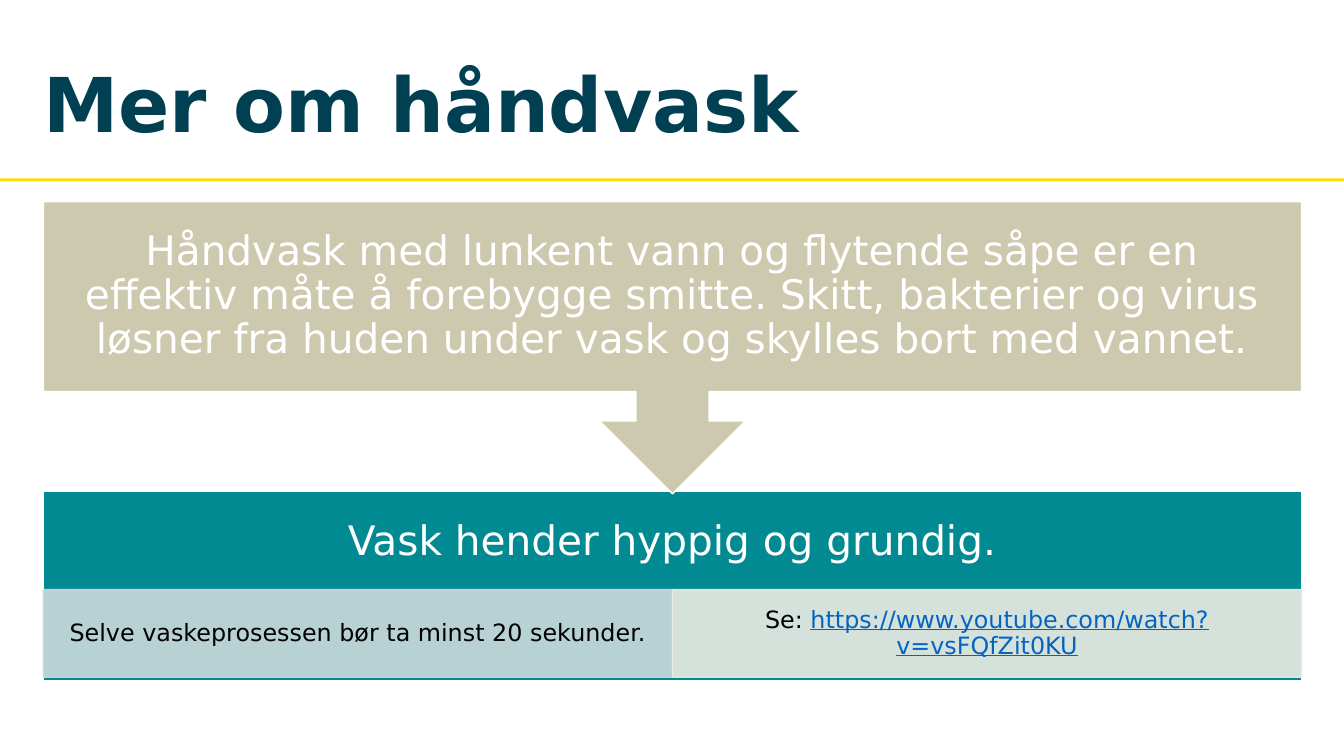
from pptx import Presentation
from pptx.dml.color import RGBColor
from pptx.enum.shapes import MSO_SHAPE as Shape
from pptx.enum.text import MSO_ANCHOR as Anchor, MSO_AUTO_SIZE as AutoSize, PP_ALIGN as Align
from pptx.oxml.ns import qn
from pptx.util import Inches, Pt
from lxml import etree

COLORS = {
    "navy": "004052", "yellow": "FFDD00", "teal": "018A92", "sand": "CDC9AF",
    "mist": "CCDADC", "cream": "EDECE4", "white": "FFFFFF", "black": "000000",
    "link": "0563C1",
}
FONT = "DejaVu Sans"
BLOCK_INSETS = (0.23, 0.23)
CELL_INSETS = (0.13, 0.02)


def color(key):
    """Return the palette colour for a key."""
    return RGBColor.from_string(COLORS[key])


def write(holder, runs, size, insets, align=Align.CENTER, bold=False):
    """Fill a text holder with one paragraph of (text, colour, underline) runs."""
    frame = holder.text_frame
    side, end = (Inches(inset) for inset in insets)
    frame_format = {
        "word_wrap": True, "auto_size": AutoSize.NONE, "vertical_anchor": Anchor.MIDDLE,
        "margin_left": side, "margin_right": side, "margin_top": end, "margin_bottom": end,
    }
    for name, value in frame_format.items():
        setattr(frame, name, value)
    paragraph = frame.paragraphs[0]
    paragraph.alignment, paragraph.line_spacing = align, 0.9
    for text, ink, underline in runs:
        run = paragraph.add_run()
        run.text = text
        font_format = {"name": FONT, "size": Pt(size), "bold": bold, "underline": underline}
        for name, value in font_format.items():
            setattr(run.font, name, value)
        run.font.color.rgb = color(ink)


def add_block(slide, kind, box, fill, outline=None, opacity=100):
    """Draw a flat preset shape with an optional outline and opacity."""
    block = slide.shapes.add_shape(kind, *map(Inches, box))
    block.shadow.inherit = False
    block.fill.solid()
    block.fill.fore_color.rgb = color(fill)
    if outline:
        block.line.color.rgb = color(outline)
        block.line.width = Pt(1)
    else:
        block.line.fill.background()
    if opacity < 100:
        for tone in block._element.spPr.iter(qn("a:srgbClr")):
            etree.SubElement(tone, qn("a:alpha"), val=str(opacity * 1000))
    return block


def add_block_text(slide, box, text):
    """Place white centred text over a block."""
    label = slide.shapes.add_textbox(*map(Inches, box))
    write(label, [(text, "white", False)], 29, BLOCK_INSETS)


def add_heading(slide, box):
    """Set the title and the yellow rule beneath it."""
    left, top, width, height = box
    add_block(slide, Shape.RECTANGLE, (0, top + height - 0.03, 13.33, 0.03), "yellow")
    title = slide.shapes.title
    for name, value in zip(("left", "top", "width", "height"), box):
        setattr(title, name, Inches(value))
    write(title, [("Mer om håndvask", "navy", False)], 54, (0, 0), Align.LEFT, True)


def add_advice(slide, box):
    """Draw the teal panel with its heading and two detail cells."""
    left, top, width, height = box
    add_block(slide, Shape.RECTANGLE, box, "teal", "white")
    add_block_text(slide, (left, top, width, 1.02), "Vask hender hyppig og grundig.")
    details = [
        ("mist", [("Selve vaskeprosessen bør ta minst 20 sekunder.", "black", False)]),
        ("cream", [("Se: ", "black", False),
                   ("https://www.youtube.com/watch?v=vsFQfZit0KU", "link", True)]),
    ]
    cell_width = width / len(details)
    for column, (fill, runs) in enumerate(details):
        cell_box = (left + column * cell_width, top + 0.98, cell_width, 0.87)
        cell = add_block(slide, Shape.RECTANGLE, cell_box, fill, fill, 90)
        write(cell, runs, 17, CELL_INSETS)


def add_reason(slide, box):
    """Draw the sand callout pointing down, with its text."""
    left, top, width, height = box
    callout = add_block(slide, Shape.UP_ARROW_CALLOUT, box, "sand", "white")
    callout.rotation = 180
    add_block_text(
        slide, (left, top, width, height * 0.65),
        "Håndvask med lunkent vann og flytende såpe er en effektiv måte å forebygge "
        "smitte. Skitt, bakterier og virus løsner fra huden under vask og skylles bort "
        "med vannet.")


def main():
    """Build and save the slide."""
    deck = Presentation()
    deck.slide_width, deck.slide_height = Inches(13.33), Inches(7.5)
    slide = deck.slides.add_slide(deck.slide_layouts[5])
    left, width = 0.43, 12.48
    add_heading(slide, (left, 0.35, width, 1.45))
    add_advice(slide, (left, 4.87, width, 1.88))
    add_reason(slide, (left, 2, width, 2.9))
    deck.save("out.pptx")


if __name__ == "__main__":
    main()
